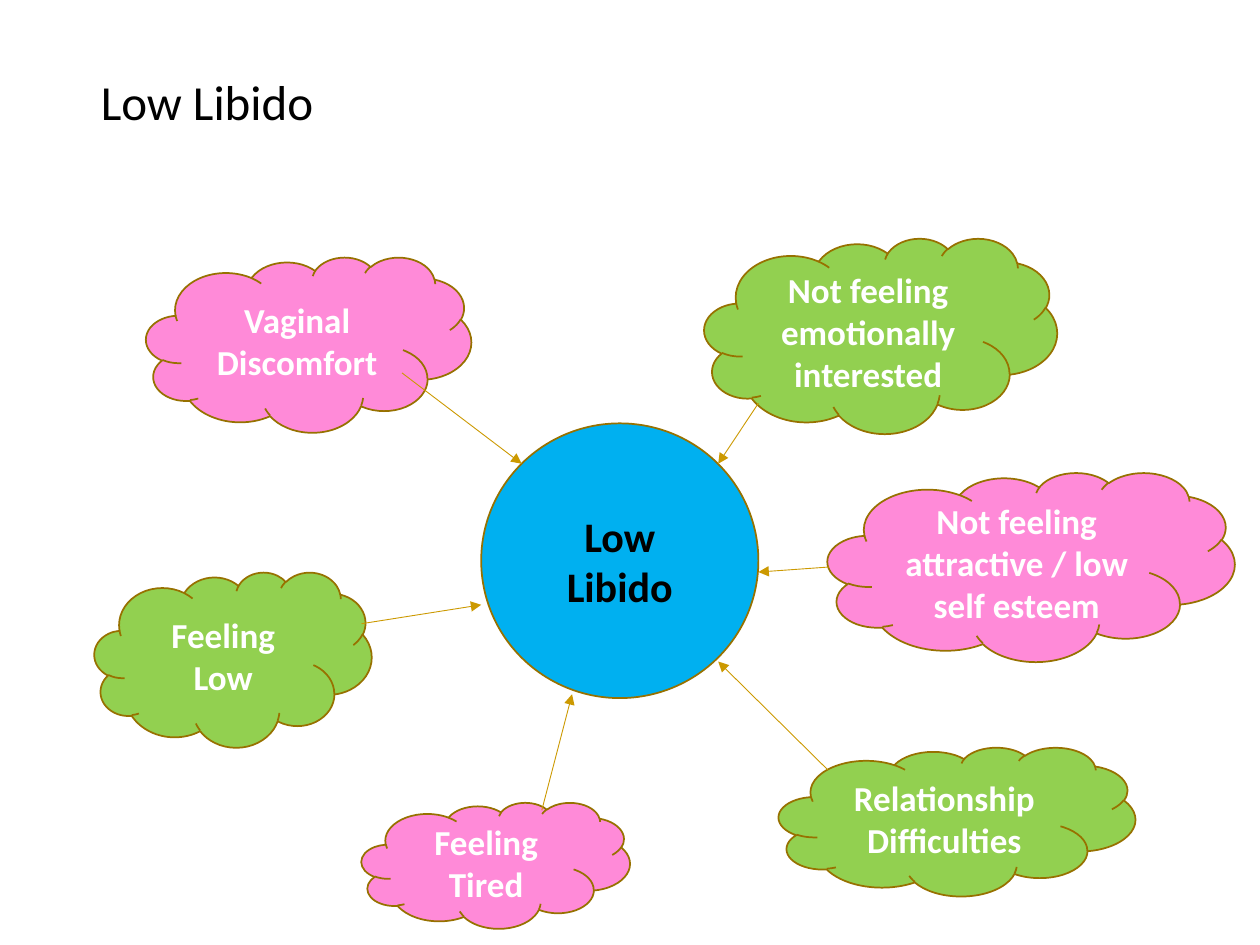
from lxml import etree
from pptx import Presentation
from pptx.dml.color import RGBColor
from pptx.enum.shapes import MSO_CONNECTOR, MSO_SHAPE
from pptx.enum.text import MSO_ANCHOR, PP_ALIGN
from pptx.oxml.ns import qn
from pptx.util import Pt

OVAL, CLOUD = MSO_SHAPE.OVAL, MSO_SHAPE.CLOUD
STRAIGHT = MSO_CONNECTOR.STRAIGHT
MIDDLE = MSO_ANCHOR.MIDDLE
LEFT, CENTER = PP_ALIGN.LEFT, PP_ALIGN.CENTER

FONT = "Calibri"
COLORS = {
    "black": "000000",
    "white": "FFFFFF",
    "blue": "00B0F0",
    "pink": "FF8AD8",
    "green": "92D050",
    "outline": "977100",
    "arrow": "CC9900",
}


def rgb(name):
    return RGBColor.from_string(COLORS[name])


def format_text(tf, size, color, align, bold):
    tf.word_wrap = True
    tf.vertical_anchor = MIDDLE
    for p in tf.paragraphs:
        p.alignment = align
        for r in p.runs:
            r.font.name = FONT
            r.font.size = Pt(size)
            r.font.bold = bold
            r.font.color.rgb = rgb(color)


prs = Presentation()
prs.slide_width, prs.slide_height = Pt(720), Pt(540)
s = prs.slides.add_slide(prs.slide_layouts[5])

# Title
title = s.shapes.title
title.left, title.top, title.width, title.height = Pt(50.4), Pt(30.2), Pt(324), Pt(55.4)
title.text_frame.text = "Low Libido"
format_text(title.text_frame, 28, "black", LEFT, False)

# Central circle and the clouds of causes around it
bubbles = [
    (OVAL, "Low\nLibido", "blue", 275, 241.9, 158.4, 157),
    (CLOUD, "Vaginal Discomfort", "pink", 83.5, 146.9, 185.8, 100.1),
    (CLOUD, "Not feeling emotionally interested", "green", 402.5, 136.1, 201.6, 111.6),
    (CLOUD, "Feeling Low", "green", 54, 326.9, 158.4, 100.1),
    (CLOUD, "Feeling Tired", "pink", 206.6, 458.6, 153.4, 72),
    (CLOUD, "Not feeling attractive / low self esteem", "pink", 473, 270, 232.6, 108),
    (CLOUD, "Relationship Difficulties", "green", 445, 427, 203.8, 85),
]
for kind, text, fill, *box in bubbles:
    sp = s.shapes.add_shape(kind, *map(Pt, box))
    sp.shadow.inherit = False
    sp.fill.solid()
    sp.fill.fore_color.rgb = rgb(fill)
    sp.line.color.rgb = rgb("outline")
    sp.line.width = Pt(1)
    sp.text_frame.text = text
    size, color = (24, "black") if kind == OVAL else (20, "white")
    format_text(sp.text_frame, size, color, CENTER, True)

# Arrows from the clouds to the circle
arrows = [
    (229.7, 213.1, 298.1, 265),
    (433.4, 230.4, 410.4, 265),
    (206.6, 356.4, 275, 345.6),
    (309.6, 463, 326.9, 396.7),
    (473, 439.9, 410.4, 378),
    (473.8, 324, 433.4, 326.9),
]
for ends in arrows:
    arrow = s.shapes.add_connector(STRAIGHT, *map(Pt, ends))
    arrow.line.color.rgb = rgb("arrow")
    arrow.line.width = Pt(0.5)
    etree.SubElement(arrow.line._get_or_add_ln(), qn("a:tailEnd"), type="triangle")
    etree.SubElement(arrow._element.spPr, qn("a:effectLst"))

prs.save("out.pptx")
